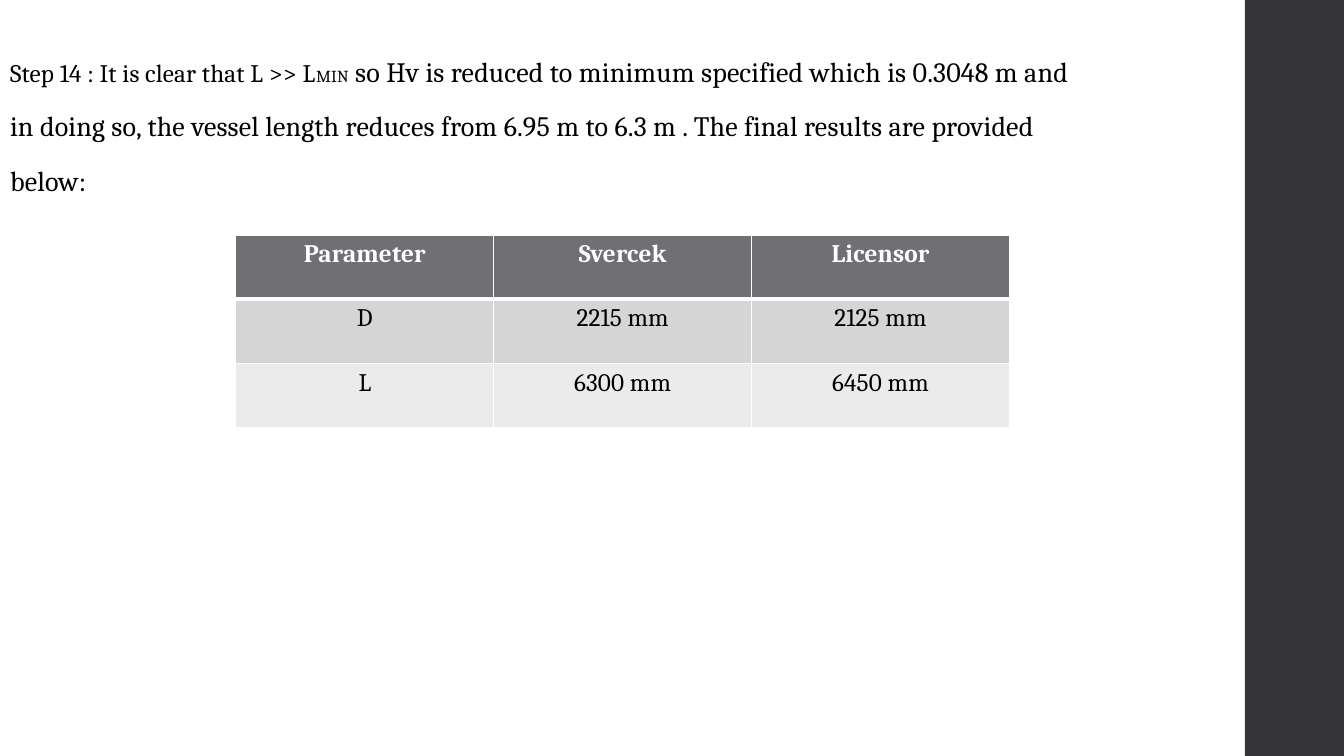
"""Build the Step 14 slide with the final vessel sizing results."""
import pptx
import pptx.util
import pptx.dml.color
import pptx.enum.shapes
import pptx.enum.text
from lxml import etree
from pptx.oxml.ns import qn

Pt = pptx.util.Pt
ALIGN = pptx.enum.text.PP_ALIGN

FONT = "Cambria"
BLACK, WHITE, DARK = "000000", "FFFFFF", "353537"
SLIDE_WIDTH, SLIDE_HEIGHT = 960, 540
SIDEBAR = (889.2, 0, 72, SLIDE_HEIGHT)
BODY = (0, 37, 888.5, 503)
TABLE_LEFT, TABLE_TOP = 168.5, 167.8
COLUMN_WIDTH, ROW_HEIGHT = 184.2, 45.84

STEP_TEXT = [
    [("Step 14 : It is clear that L >> L", 18), ("MIN", 12),
     (" so Hv is reduced to minimum specified which is 0.3048 m and", 20)],
    [("in doing so, the vessel length reduces from 6.95 m to 6.3 m . "
      "The final results are provided", 20)],
    [("below:", 20)],
]
RESULTS = [
    ("Parameter", "Svercek", "Licensor"),
    ("D", "2215 mm", "2125 mm"),
    ("L", "6300 mm", "6450 mm"),
]
ROW_FILLS = ["6F6F74", "D5D5D6", "EBEBEB"]


def color(value):
    return pptx.dml.color.RGBColor.from_string(value)


def place(shape, box):
    shape.left, shape.top, shape.width, shape.height = map(Pt, box)


def add_run(paragraph, text, size, text_color, bold=False):
    run = paragraph.add_run()
    run.text = text
    run.font.name = FONT
    run.font.size = Pt(size)
    run.font.bold = bold
    run.font.color.rgb = color(text_color)
    run.font._element.set("spc", "10")


def add_sidebar(slide):
    sidebar = slide.shapes.add_shape(
        pptx.enum.shapes.MSO_SHAPE.RECTANGLE, *map(Pt, SIDEBAR))
    sidebar.shadow.inherit = False
    sidebar.fill.solid()
    sidebar.fill.fore_color.rgb = color(DARK)
    sidebar.line.fill.background()


def fill_body(body):
    place(body, BODY)
    frame = body.text_frame
    frame.word_wrap = True
    frame.auto_size = pptx.enum.text.MSO_AUTO_SIZE.NONE
    frame.vertical_anchor = pptx.enum.text.MSO_ANCHOR.TOP
    for index, runs in enumerate(STEP_TEXT):
        paragraph = frame.add_paragraph() if index else frame.paragraphs[0]
        paragraph.alignment = ALIGN.LEFT
        paragraph.line_spacing = 0.95
        paragraph.space_before = Pt(14)
        paragraph.space_after = Pt(2)
        properties = paragraph._p.get_or_add_pPr()
        properties.set("marL", "0")
        properties.set("indent", "0")
        etree.SubElement(properties, qn("a:buNone"))
        for text, size in runs:
            add_run(paragraph, text, size, BLACK)


def set_borders(cell, widths):
    properties = cell._tc.get_or_add_tcPr()
    for position, (side, width) in enumerate(widths.items()):
        line = etree.Element(qn(f"a:ln{side}"), w=str(int(Pt(width))))
        fill = etree.SubElement(line, qn("a:solidFill"))
        etree.SubElement(fill, qn("a:srgbClr"), val=WHITE)
        properties.insert(position, line)


def add_results(slide):
    rows, columns = len(RESULTS), len(RESULTS[0])
    table = slide.shapes.add_table(
        rows, columns, Pt(TABLE_LEFT), Pt(TABLE_TOP),
        Pt(columns * COLUMN_WIDTH), Pt(rows * ROW_HEIGHT)).table
    for row_index, values in enumerate(RESULTS):
        header = row_index == 0
        for column_index, value in enumerate(values):
            cell = table.cell(row_index, column_index)
            cell.fill.solid()
            cell.fill.fore_color.rgb = color(ROW_FILLS[row_index])
            set_borders(cell, {"L": 1, "R": 1,
                               "T": 3 if row_index == 1 else 1,
                               "B": 3 if header else 1})
            paragraph = cell.text_frame.paragraphs[0]
            paragraph.alignment = ALIGN.CENTER
            add_run(paragraph, value, 18, WHITE if header else BLACK, header)


def main():
    presentation = pptx.Presentation()
    presentation.slide_width = Pt(SLIDE_WIDTH)
    presentation.slide_height = Pt(SLIDE_HEIGHT)
    slide = presentation.slides.add_slide(presentation.slide_layouts[1])
    title = slide.shapes.title._element
    title.getparent().remove(title)
    fill_body(slide.placeholders[1])
    add_sidebar(slide)
    add_results(slide)
    presentation.save("out.pptx")


if __name__ == "__main__":
    main()
